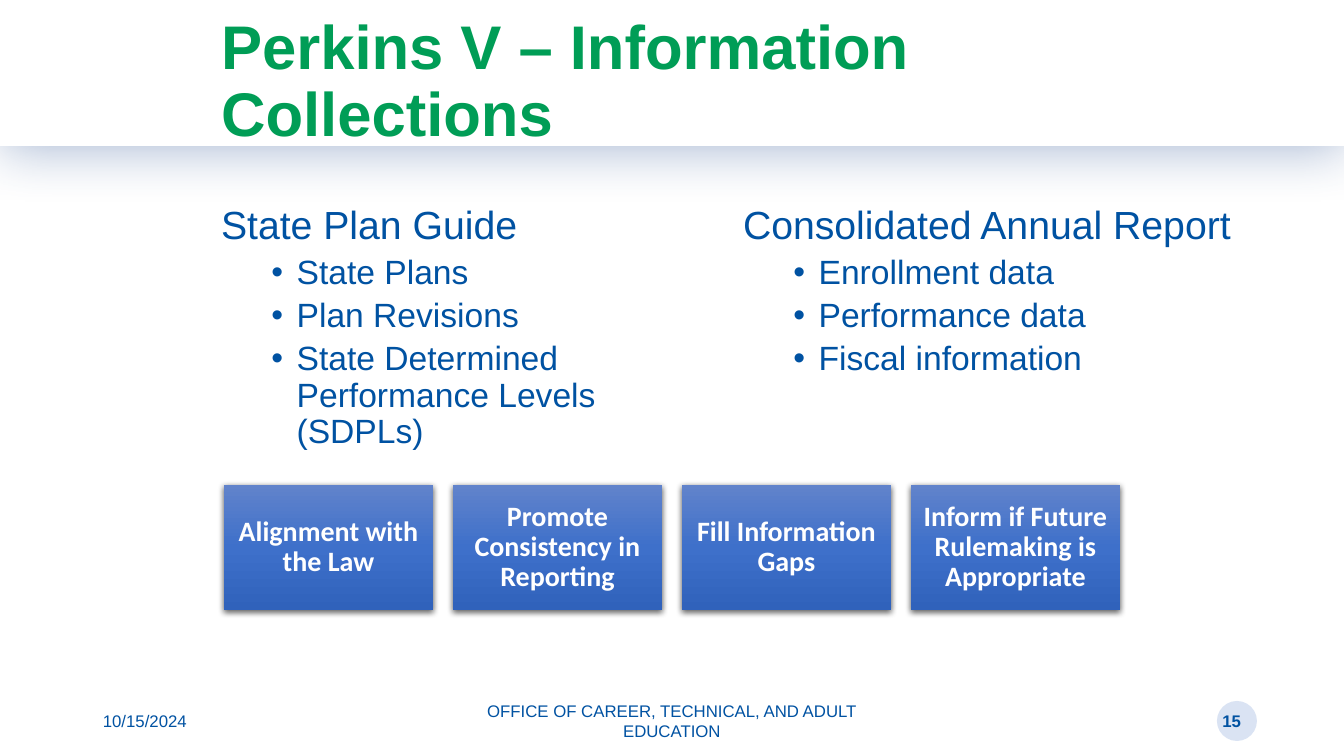
"""Build the Perkins V information collections slide."""
from lxml import etree
from pptx import Presentation
from pptx.dml.color import RGBColor
from pptx.enum.shapes import MSO_SHAPE
from pptx.enum.text import MSO_ANCHOR, MSO_AUTO_SIZE, PP_ALIGN
from pptx.oxml import parse_xml
from pptx.oxml.ns import nsdecls, qn
from pptx.util import Emu, Pt

RECTANGLE, OVAL = MSO_SHAPE.RECTANGLE, MSO_SHAPE.OVAL
LEFT, CENTER, RIGHT = PP_ALIGN.LEFT, PP_ALIGN.CENTER, PP_ALIGN.RIGHT
TOP, MIDDLE = MSO_ANCHOR.TOP, MSO_ANCHOR.MIDDLE
NO_AUTOFIT = MSO_AUTO_SIZE.NONE
BLUE, GREEN, WHITE = "0052A2", "009D56", "FFFFFF"
CARD_GRADIENT = [(0, "6183CB"), (50, "3E70CA"), (100, "3062BB")]


def px(*lengths):
    """Turn pixel lengths into a list of EMU."""
    return [Emu(round(length * 914400 / 100.8)) for length in lengths]


def format_paragraph(paragraph, size, color, bold=False, align=LEFT, font="Arial", spacing=0.9, before=0):
    """Set the spacing of a paragraph and the font of its runs."""
    paragraph.alignment = align
    paragraph.line_spacing = spacing
    paragraph.space_before = Pt(before)
    for run in paragraph.runs:
        run.font.name = font
        run.font.size = Pt(size)
        run.font.bold = bold
        run.font.color.rgb = RGBColor.from_string(color)


presentation = Presentation()
presentation.slide_width, presentation.slide_height = px(1344, 756)
slide = presentation.slides.add_slide(presentation.slide_layouts[3])
title, left_list, right_list = slide.placeholders
shadows = []

number_circle = slide.shapes.add_shape(OVAL, *px(1217, 701, 40, 40))
header_band = slide.shapes.add_shape(RECTANGLE, *px(0, 0, 1344, 146))
for position, (shape, color) in enumerate([(number_circle, "DAE3F3"), (header_band, WHITE)], 2):
    shape.shadow.inherit = False
    shape.fill.solid()
    shape.fill.fore_color.rgb = RGBColor.from_string(color)
    shape.line.fill.background()
    slide.shapes.element.insert(position, shape.element)
shadows.append((header_band, "2F5597", 40, 38, 3))

title.left, title.top, title.width, title.height = px(211, 40, 1041, 86)
title.text_frame.text = "Perkins V – Information Collections"
title.text_frame.auto_size = NO_AUTOFIT
title.text_frame.vertical_anchor = MIDDLE
format_paragraph(title.text_frame.paragraphs[0], 44, GREEN, bold=True)

lists = [
    (left_list, 211, ["State Plan Guide", "State Plans", "Plan Revisions",
                      "State Determined Performance Levels (SDPLs)"]),
    (right_list, 733, ["Consolidated Annual Report", "Enrollment data",
                       "Performance data", "Fiscal information"]),
]
for placeholder, left, lines in lists:
    placeholder.left, placeholder.top, placeholder.width, placeholder.height = px(left, 201, 519, 273)
    text_frame = placeholder.text_frame
    text_frame.text = "\n".join(lines)
    text_frame.auto_size = NO_AUTOFIT
    text_frame.vertical_anchor = TOP
    heading, *items = text_frame.paragraphs
    properties = heading._p.get_or_add_pPr()
    properties.set("marL", "0")
    properties.set("indent", "0")
    etree.SubElement(properties, qn("a:buNone"))
    format_paragraph(heading, 28, BLUE)
    for item in items:
        item.level = 1
        properties = item._p.get_or_add_pPr()
        properties.set("marL", "685800")
        properties.set("indent", "-228600")
        etree.SubElement(properties, qn("a:buFont")).set("typeface", "Arial")
        etree.SubElement(properties, qn("a:buChar")).set("char", "•")
        format_paragraph(item, 24, BLUE, before=5)

footers = [
    ("10/15/2024", 93, 302, LEFT, False),
    ("OFFICE OF CAREER, TECHNICAL, AND ADULT EDUCATION", 445, 454, CENTER, False),
    ("15", 949, 302, RIGHT, True),
]
for text, left, width, align, bold in footers:
    footer = slide.shapes.add_textbox(*px(left, 701, width, 40))
    footer.text_frame.word_wrap = True
    footer.text_frame.vertical_anchor = MIDDLE
    footer.text_frame.text = text
    format_paragraph(footer.text_frame.paragraphs[0], 12, BLUE, bold, align, spacing=1.0)

goals = ["Alignment with the Law", "Promote Consistency in Reporting",
         "Fill Information Gaps", "Inform if Future Rulemaking is Appropriate"]
stops = "".join(f'<a:gs pos="{position * 1000}"><a:srgbClr val="{color}"/></a:gs>'
                for position, color in CARD_GRADIENT)
for column, goal in enumerate(goals):
    card = slide.shapes.add_shape(RECTANGLE, *px(224 + 229 * column, 485, 209, 125))
    card.shadow.inherit = False
    card.line.fill.background()
    card.element.spPr.insert(2, parse_xml(
        f'<a:gradFill {nsdecls("a")} rotWithShape="1"><a:gsLst>{stops}</a:gsLst>'
        '<a:lin ang="5400000" scaled="0"/></a:gradFill>'))
    text_frame = card.text_frame
    text_frame.margin_left, text_frame.margin_top, text_frame.margin_right, text_frame.margin_bottom = px(8, 8, 8, 8)
    text_frame.word_wrap = True
    text_frame.vertical_anchor = MIDDLE
    text_frame.text = goal
    format_paragraph(text_frame.paragraphs[0], 20, WHITE, True, CENTER, "Calibri")
    shadows.append((card, "000000", 63, 4.5, 1.5))

for shape, color, opacity, blur, distance in shadows:
    shape.element.spPr.find(qn("a:effectLst")).append(parse_xml(
        f'<a:outerShdw {nsdecls("a")} blurRad="{Pt(blur)}" dist="{Pt(distance)}" dir="5400000" '
        f'algn="ctr" rotWithShape="0"><a:srgbClr val="{color}">'
        f'<a:alpha val="{opacity * 1000}"/></a:srgbClr></a:outerShdw>'))

presentation.save("out.pptx")
